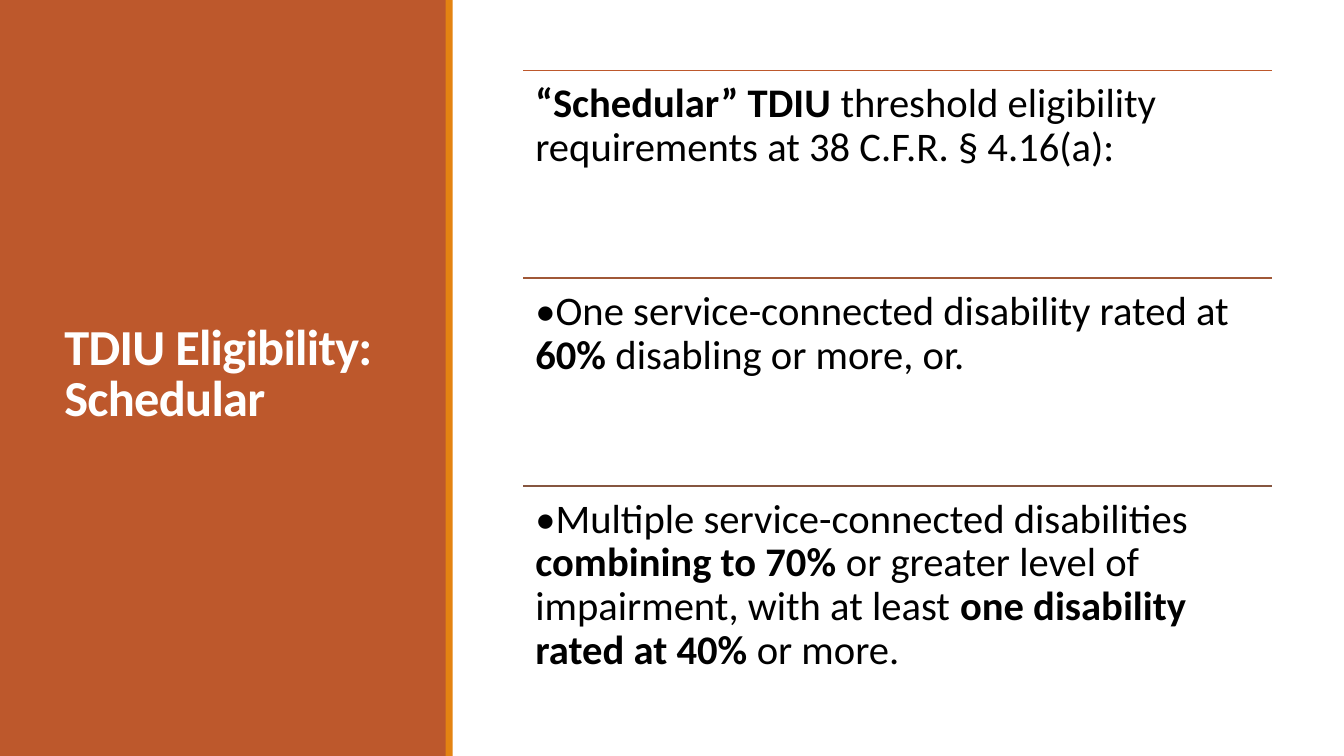
from dataclasses import dataclass

from lxml import etree
from pptx import Presentation
from pptx.dml.color import RGBColor
from pptx.enum import shapes, text
from pptx.oxml import ns
from pptx.slide import Slide
from pptx.text.text import TextFrame
from pptx.util import Inches, Pt

RUST = RGBColor(0xBD, 0x58, 0x2C)
ORANGE = RGBColor(0xE4, 0x83, 0x12)
BROWN = RGBColor(0xA0, 0x58, 0x37)
DARK_BROWN = RGBColor(0x86, 0x56, 0x40)
WHITE = RGBColor(0xFF, 0xFF, 0xFF)
BLACK = RGBColor(0, 0, 0)

FONT = "Calibri"
SLIDE_WIDTH, SLIDE_HEIGHT = 13.33, 7.5
LIST_LEFT, LIST_TOP, LIST_WIDTH, ROW_HEIGHT = 5.19, 0.7, 7.43, 2.06


@dataclass(frozen=True)
class Band:
    left: float
    width: float
    color: RGBColor


@dataclass(frozen=True)
class Phrase:
    words: str
    bold: bool = False


@dataclass(frozen=True)
class Requirement:
    rule_color: RGBColor
    phrases: tuple[Phrase, ...]


BANDS = (Band(0, 4.43, RUST), Band(4.42, 0.07, ORANGE))

REQUIREMENTS = (
    Requirement(RUST, (
        Phrase("“Schedular” TDIU ", True),
        Phrase("threshold eligibility requirements at 38 C.F.R. § 4.16(a):"),
    )),
    Requirement(BROWN, (
        Phrase("•One service-connected disability rated at "),
        Phrase("60% ", True),
        Phrase("disabling or more, or."),
    )),
    Requirement(DARK_BROWN, (
        Phrase("•Multiple service-connected disabilities "),
        Phrase("combining to 70% ", True),
        Phrase("or greater level of impairment, with at least "),
        Phrase("one disability rated at 40% ", True),
        Phrase("or more."),
    )),
)


def add_band(slide: Slide, band: Band) -> None:
    """Draw a full-height vertical colour band."""
    shape = slide.shapes.add_shape(
        shapes.MSO_SHAPE.RECTANGLE,
        Inches(band.left), 0, Inches(band.width), Inches(SLIDE_HEIGHT),
    )
    shape.shadow.inherit = False
    shape.fill.solid()
    shape.fill.fore_color.rgb = band.color
    shape.line.fill.background()


def add_text_frame(slide: Slide, left: float, top: float,
                   width: float, height: float) -> TextFrame:
    box = slide.shapes.add_textbox(
        Inches(left), Inches(top), Inches(width), Inches(height))
    box.text_frame.word_wrap = True
    return box.text_frame


def add_title(slide: Slide) -> None:
    frame = add_text_frame(slide, 0.54, 0.57, 3.37, 6.31)
    frame.vertical_anchor = text.MSO_ANCHOR.MIDDLE
    paragraph = frame.paragraphs[0]
    paragraph.line_spacing = 0.85
    font = paragraph.font
    font.name, font.size, font.bold = FONT, Pt(36), True
    font.color.rgb = WHITE
    run = paragraph.add_run()
    run.text = "TDIU Eligibility: Schedular"
    run.font.bold = True
    run._r.get_or_add_rPr().set("spc", "-50")


def add_rule(slide: Slide, top: float, color: RGBColor) -> None:
    """Draw the thin line above a requirement."""
    rule = slide.shapes.add_connector(
        shapes.MSO_CONNECTOR.STRAIGHT, Inches(LIST_LEFT), Inches(top),
        Inches(LIST_LEFT + LIST_WIDTH), Inches(top),
    )
    rule.line.color.rgb = color
    rule.line.width = Pt(1.25)
    etree.SubElement(rule._element.spPr, ns.qn("a:effectLst"))


def add_requirement(slide: Slide, top: float, requirement: Requirement) -> None:
    add_rule(slide, top, requirement.rule_color)
    frame = add_text_frame(slide, LIST_LEFT, top, LIST_WIDTH, ROW_HEIGHT)
    frame.margin_left = frame.margin_right = Inches(0.12)
    frame.margin_top = frame.margin_bottom = Inches(0.12)
    paragraph = frame.paragraphs[0]
    paragraph.line_spacing = 0.9
    font = paragraph.font
    font.name, font.size = FONT, Pt(29)
    font.color.rgb = BLACK
    for phrase in requirement.phrases:
        run = paragraph.add_run()
        run.text = phrase.words
        run.font.bold = phrase.bold


def main() -> None:
    presentation = Presentation()
    presentation.slide_width = Inches(SLIDE_WIDTH)
    presentation.slide_height = Inches(SLIDE_HEIGHT)
    slide = presentation.slides.add_slide(presentation.slide_layouts[6])
    for band in BANDS:
        add_band(slide, band)
    add_title(slide)
    for row, requirement in enumerate(REQUIREMENTS):
        add_requirement(slide, LIST_TOP + row * ROW_HEIGHT, requirement)
    presentation.save("out.pptx")


if __name__ == "__main__":
    main()
